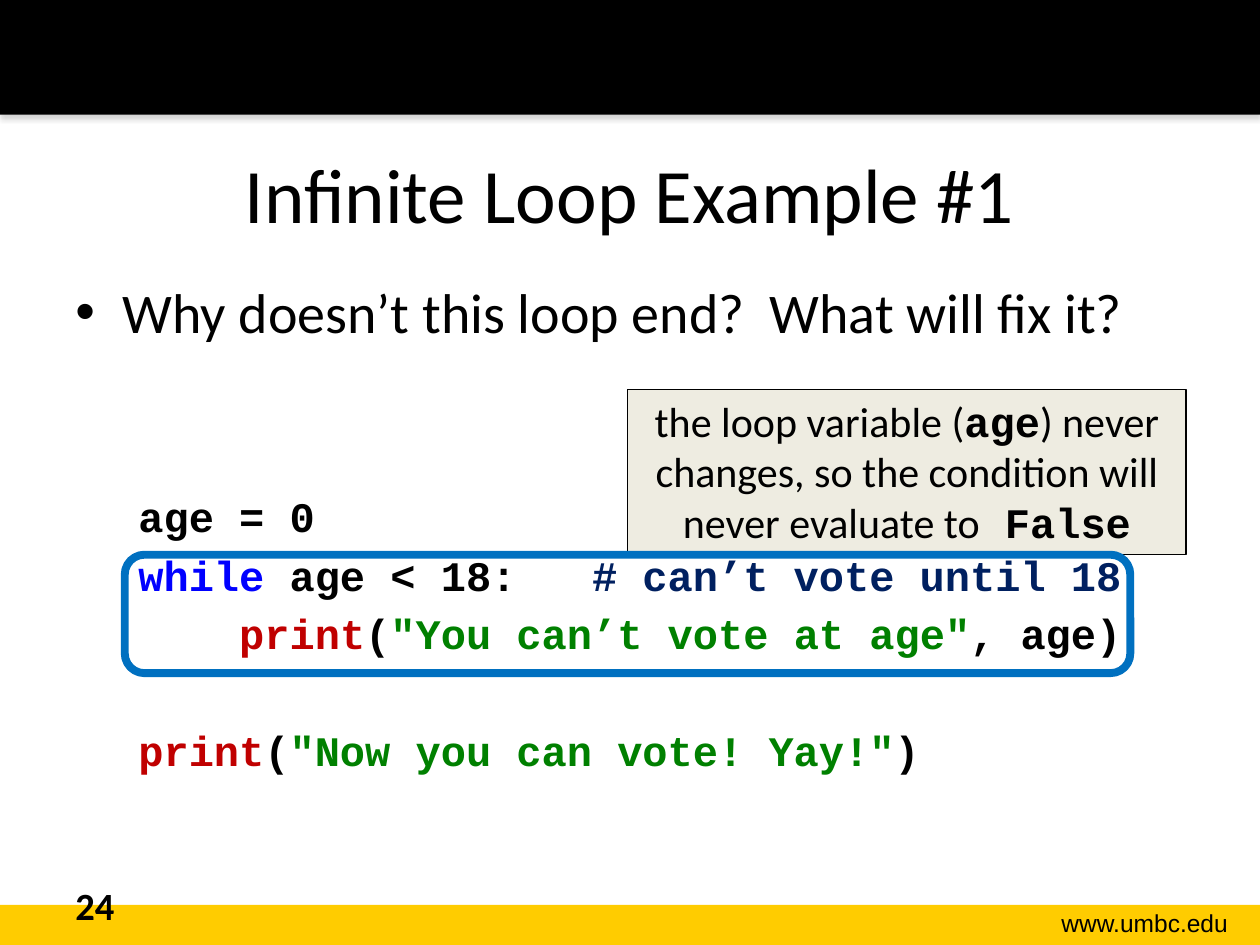
import pptx
import pptx.dml.color
import pptx.enum.shapes
import pptx.enum.text
import pptx.oxml
import pptx.oxml.ns
import pptx.util

Pt = pptx.util.Pt
RGBColor = pptx.dml.color.RGBColor
SHAPES = pptx.enum.shapes.MSO_SHAPE
ALIGN = pptx.enum.text.PP_ALIGN
ANCHOR = pptx.enum.text.MSO_ANCHOR

BLACK = RGBColor(0x00, 0x00, 0x00)
GOLD = RGBColor(0xFF, 0xCC, 0x00)
CREAM = RGBColor(0xEE, 0xEC, 0xE1)
OUTLINE_BLUE = RGBColor(0x00, 0x70, 0xC0)
KEYWORD_BLUE = RGBColor(0x00, 0x00, 0xFF)
COMMENT_NAVY = RGBColor(0x00, 0x20, 0x60)
FUNCTION_RED = RGBColor(0xC0, 0x00, 0x00)
STRING_GREEN = RGBColor(0x00, 0x80, 0x00)


def add_run(paragraph, text, size, font="Calibri", color=BLACK, bold=False):
    run = paragraph.add_run()
    run.text = text
    run.font.size = Pt(size)
    run.font.name = font
    run.font.bold = bold
    run.font.color.rgb = color


def add_text_box(left, top, width, height, anchor=ANCHOR.TOP):
    frame = slide.shapes.add_textbox(Pt(left), Pt(top), Pt(width), Pt(height)).text_frame
    frame.word_wrap = True
    frame.vertical_anchor = anchor
    return frame


presentation = pptx.Presentation()
presentation.slide_width = Pt(720)
presentation.slide_height = Pt(540)
slide = presentation.slides.add_slide(presentation.slide_layouts[6])

for top, height, color in [(517, 23, GOLD), (0, 65.5, BLACK)]:
    band = slide.shapes.add_shape(SHAPES.RECTANGLE, 0, Pt(top), Pt(720), Pt(height))
    band.shadow.inherit = False
    band.fill.solid()
    band.fill.fore_color.rgb = color
    band.line.fill.background()

effects = band.element.spPr.find(pptx.oxml.ns.qn("a:effectLst"))
effects.append(pptx.oxml.parse_xml(
    f'<a:outerShdw {pptx.oxml.ns.nsdecls("a")} blurRad="39370" dist="22860" dir="5400000" rotWithShape="0">'
    '<a:srgbClr val="808080"><a:alpha val="35000"/></a:srgbClr></a:outerShdw>'))

website = add_text_box(565.5, 515.2, 143.3, 24.5).paragraphs[0]
website.alignment = ALIGN.RIGHT
add_run(website, "www.umbc.edu", 14, "Arial")

title = add_text_box(36, 65, 648, 90, ANCHOR.MIDDLE).paragraphs[0]
title.alignment = ALIGN.CENTER
add_run(title, "Infinite Loop Example #1", 44)

body = add_text_box(36, 154.8, 648, 327.6)
question = body.paragraphs[0]
properties = question._p.get_or_add_pPr()
properties.set("marL", str(Pt(27)))
properties.set("indent", str(Pt(-27)))
for bullet in ('<a:buFont {} typeface="Arial"/>', '<a:buChar {} char="•"/>'):
    properties.append(pptx.oxml.parse_xml(bullet.format(pptx.oxml.ns.nsdecls("a"))))
add_run(question, "Why doesn’t this loop end?  What will fix it?", 32)

code_lines = [
    (83.4, [("age = 0", BLACK)]),
    (4.8, [("while", KEYWORD_BLUE), (" age < 18:   ", BLACK),
           ("# can’t vote until 18", COMMENT_NAVY)]),
    (4.8, [("    print", FUNCTION_RED), ("(", BLACK),
           ('"You can’t vote at age"', STRING_GREEN), (", age)", BLACK)]),
    (38, [("print", FUNCTION_RED), ("(", BLACK),
          ('"Now you can vote! Yay!"', STRING_GREEN), (")", BLACK)]),
]
for space_before, tokens in code_lines:
    code_line = body.add_paragraph()
    code_line._p.get_or_add_pPr().set("marL", str(Pt(36)))
    code_line.space_before = Pt(space_before)
    for text, color in tokens:
        add_run(code_line, text, 24, "Courier New", color, True)

page_number = add_text_box(36, 500.4, 167.8, 28.8).paragraphs[0]
add_run(page_number, "24", 22, bold=True)

callout = slide.shapes.add_shape(SHAPES.RECTANGLE, Pt(358.6), Pt(222.5), Pt(319.2), Pt(94.3))
callout.shadow.inherit = False
callout.fill.solid()
callout.fill.fore_color.rgb = CREAM
callout.line.color.rgb = BLACK
callout.line.width = Pt(0.75)
callout.text_frame.word_wrap = True
callout.text_frame.vertical_anchor = ANCHOR.TOP
explanation = callout.text_frame.paragraphs[0]
explanation.alignment = ALIGN.CENTER
add_run(explanation, "the loop variable (", 24)
add_run(explanation, "age", 24, "Courier New", bold=True)
add_run(explanation, ") never changes, so the condition will never evaluate to", 24)
add_run(explanation, " False", 24, "Courier New", bold=True)

loop_outline = slide.shapes.add_shape(
    SHAPES.ROUNDED_RECTANGLE, Pt(71.3), Pt(317), Pt(574.6), Pt(67.7))
loop_outline.shadow.inherit = False
loop_outline.fill.background()
loop_outline.line.color.rgb = OUTLINE_BLUE
loop_outline.line.width = Pt(4.5)

presentation.save("out.pptx")
